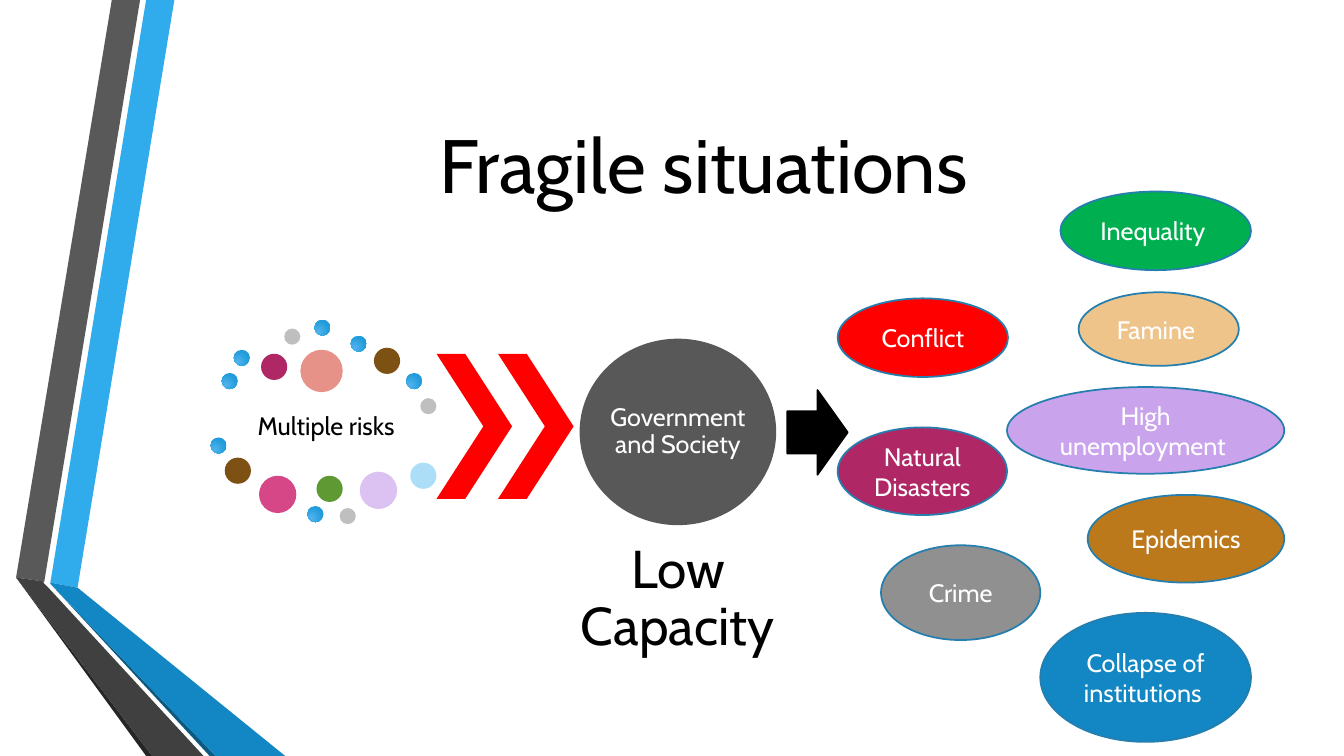
"""Build the slide on fragile situations on a grid of tenth-inch cells."""
from typing import NamedTuple, Optional

from lxml import etree
from pptx import Presentation
from pptx import util as u
from pptx.dml import color
from pptx.enum import shapes, text

COLUMNS, ROWS = 133.33, 75
CELL = u.Inches(0.1)
FONT = "Cabin"
BLACK, WHITE, RED = "000000", "FFFFFF", "FF0000"
SKY = "gradient"
SKY_INNER, SKY_OUTER = "51B3ED", "219CDB"
OUTLINE = "247FAF"
SMALL, MEDIUM, LARGE, HUGE = 1.6, 2.6, 3.7, 4.2


class Area(NamedTuple):
    """Place and size in grid columns and rows."""
    column: float
    row: float
    columns: float
    rows: float


class Ribbon(NamedTuple):
    """A filled outline at the slide's left edge."""
    fill: str
    points: list[tuple[float, float]]


class Dot(NamedTuple):
    """A small risk circle."""
    column: float
    row: float
    size: float
    fill: str


class Outcome(NamedTuple):
    """A labelled ellipse."""
    label: str
    area: Area
    fill: str


class Label(NamedTuple):
    """A free caption."""
    label: str
    area: Area
    size: float
    inset: float


RIBBONS = [
    Ribbon("30ACEC", [(5, 57.8), (7.7, 58.3), (17.3, 0), (14.5, 0)]),
    Ribbon("595959", [(13.9, 0), (11.1, 0), (1.6, 57.3), (4.4, 57.7)]),
    Ribbon("262626", [(1.6, 57.3), (14.5, ROWS), (15.1, ROWS)]),
    Ribbon("0C5A82", [(5, 57.9), (20.8, ROWS), (21.4, ROWS)]),
    Ribbon("1287C3", [(5, 57.9), (21.4, ROWS), (28.3, ROWS), (7.7, 58.3), (5, 57.8)]),
    Ribbon("404040", [(20.2, ROWS), (4.8, 58.3), (4.3, 57.8), (4.4, 57.7),
                      (1.6, 57.3), (15.1, ROWS)]),
]

DOTS = [
    Dot(22, 37, SMALL, SKY),
    Dot(23.2, 34.7, SMALL, SKY),
    Dot(25.9, 35.1, MEDIUM, "AF2764"),
    Dot(28.2, 32.6, SMALL, "BFBFBF"),
    Dot(31.2, 31.7, SMALL, SKY),
    Dot(34.8, 33.3, SMALL, SKY),
    Dot(37.1, 34.5, MEDIUM, "7D5013"),
    Dot(40.3, 37, SMALL, SKY),
    Dot(41.7, 39.5, SMALL, "BFBFBF"),
    Dot(29.8, 34.7, HUGE, "E69289"),
    Dot(20.9, 43.4, SMALL, SKY),
    Dot(22.3, 45.4, MEDIUM, "7D5013"),
    Dot(25.7, 47.2, LARGE, "D64787"),
    Dot(30.5, 50.2, SMALL, SKY),
    Dot(31.4, 47.2, MEDIUM, "5F9934"),
    Dot(33.7, 50.4, SMALL, "BFBFBF"),
    Dot(35.7, 46.8, LARGE, "DBC2F3"),
    Dot(40.7, 45.9, MEDIUM, "ACDEF7"),
]

OUTCOMES = [
    Outcome("Conflict", Area(83.1, 29.6, 16.9, 7.8), RED),
    Outcome("Famine ", Area(107, 29, 15.9, 7.3), "EEC48B"),
    Outcome("Epidemics", Area(107.9, 49.1, 19.5, 8.7), "BC791C"),
    Outcome("Crime", Area(87.4, 54.1, 15.8, 9.4), "909090"),
    Outcome("Natural Disasters", Area(83.1, 42.4, 16.8, 8.7), "AF2764"),
    Outcome("Collapse of institutions ", Area(103.2, 60.8, 20.9, 12.8), "1287C3"),
    Outcome("High unemployment ", Area(99.9, 38.4, 27.5, 8.6), "CAA3ED"),
    Outcome("Inequality ", Area(105.2, 19, 18.9, 7.8), "00B050"),
]

TITLE = Label("Fragile situations", Area(34.1, 6.6, 71.4, 19.2), 54, 0.5)
CAPTIONS = [
    Label("Multiple risks", Area(22.1, 39, 20.5, 6.7), 18, 0.3),
    Label("Low Capacity", Area(57, 53.2, 20.5, 12.6), 38, 0.5),
]
SOCIETY = Outcome("Government and Society", Area(57.5, 33.6, 19.5, 18.5), "585858")
CHEVRON_COLUMNS = (43.3, 49.4)


def cells(count: float) -> int:
    """Turn a number of grid cells into a length."""
    return round(count * CELL)


def rgb(code: str) -> color.RGBColor:
    """Turn a hex string into a colour."""
    return color.RGBColor.from_string(code)


def paint(shape, fill: str, line: Optional[str] = None) -> None:
    """Give a shape its fill, its line and no shadow."""
    shape.shadow.inherit = False
    if fill == SKY:
        paint_sky(shape)
    else:
        shape.fill.solid()
        shape.fill.fore_color.rgb = rgb(fill)
    if line:
        shape.line.color.rgb = rgb(line)
        shape.line.width = u.Pt(1.25)
    else:
        shape.line.fill.background()


def paint_sky(shape) -> None:
    """Fill a shape with the round blue gradient."""
    shape.fill.gradient()
    for stop, code, place in zip(shape.fill.gradient_stops, (SKY_INNER, SKY_OUTER), (0, 1)):
        stop.color.rgb = rgb(code)
        stop.position = place
    linear = shape.element.find(".//{*}lin")
    space = etree.QName(linear).namespace
    circle = etree.Element(f"{{{space}}}path", attrib={"path": "circle"})
    etree.SubElement(circle, f"{{{space}}}fillToRect",
                     l="50000", t="100000", r="100000", b="50000")
    linear.getparent().replace(linear, circle)


def write(box, label: str, size: float, code: str,
          inset: Optional[float] = None, spacing: float = 1.0) -> None:
    """Write one centred paragraph into a box."""
    frame = box.text_frame
    frame.word_wrap = True
    frame.vertical_anchor = text.MSO_ANCHOR.MIDDLE
    if inset is not None:
        frame.margin_left = frame.margin_right = cells(inset)
        frame.margin_top = frame.margin_bottom = cells(inset)
    para = frame.paragraphs[0]
    para.alignment = text.PP_ALIGN.CENTER
    para.line_spacing = spacing
    span = para.add_run()
    span.text = label
    span.font.name = FONT
    span.font.size = u.Pt(size)
    span.font.color.rgb = rgb(code)


def add_preset(page, kind, area: Area, fill: str, line: Optional[str] = None):
    """Draw a preset shape on the grid."""
    shape = page.shapes.add_shape(kind, *map(cells, area))
    paint(shape, fill, line)
    return shape


def add_ribbon(page, ribbon: Ribbon) -> None:
    """Draw a ribbon from its corner points."""
    corners = [(cells(column), cells(row)) for column, row in ribbon.points]
    builder = page.shapes.build_freeform(*corners[0])
    builder.add_line_segments(corners[1:], close=True)
    paint(builder.convert_to_shape(), ribbon.fill)


def add_title(page, title: Label) -> None:
    """Move and fill the title placeholder."""
    box = page.shapes.title
    box.left, box.top, box.width, box.height = map(cells, title.area)
    write(box, title.label, title.size, BLACK, title.inset)


def main() -> None:
    """Draw the slide and save it."""
    deck = Presentation()
    deck.slide_width, deck.slide_height = cells(COLUMNS), cells(ROWS)
    page = deck.slides.add_slide(deck.slide_layouts[5])
    kinds = shapes.MSO_SHAPE

    for ribbon in RIBBONS:
        add_ribbon(page, ribbon)
    add_title(page, TITLE)
    for dot in DOTS:
        add_preset(page, kinds.OVAL, Area(dot.column, dot.row, dot.size, dot.size), dot.fill)
    for column in CHEVRON_COLUMNS:
        chevron = add_preset(page, kinds.CHEVRON, Area(column, 35.1, 7.5, 14.4), RED)
        chevron.adjustments[0] = 0.62
    society = add_preset(page, kinds.OVAL, SOCIETY.area, SOCIETY.fill)
    write(society, SOCIETY.label, 18, WHITE, inset=0, spacing=0.9)
    for caption in CAPTIONS:
        box = page.shapes.add_textbox(*map(cells, caption.area))
        write(box, caption.label, caption.size, BLACK, caption.inset, spacing=0.9)
    add_preset(page, kinds.RIGHT_ARROW, Area(78.1, 38.7, 6, 8.4), BLACK, BLACK)
    for outcome in OUTCOMES:
        ellipse = add_preset(page, kinds.OVAL, outcome.area, outcome.fill, OUTLINE)
        write(ellipse, outcome.label, 18, WHITE)
    deck.save("out.pptx")


if __name__ == "__main__":
    main()
